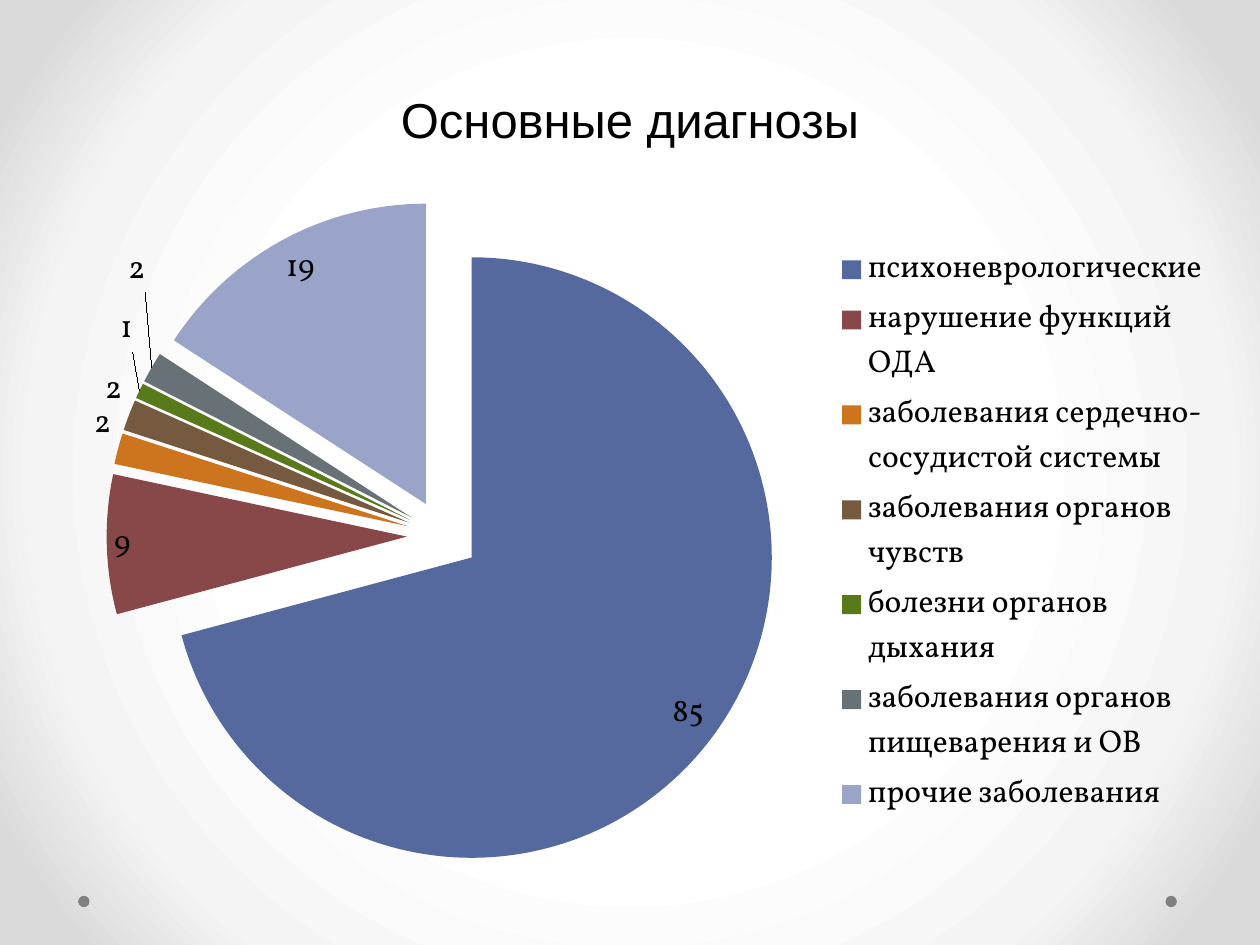
from dataclasses import dataclass

from lxml import etree
from pptx import Presentation
from pptx.chart.data import CategoryChartData
from pptx.dml.color import RGBColor
from pptx.enum.chart import XL_CHART_TYPE as ChartType
from pptx.enum.chart import XL_LABEL_POSITION as LabelPosition
from pptx.enum.chart import XL_LEGEND_POSITION as LegendPosition
from pptx.enum.shapes import MSO_SHAPE as Shape
from pptx.enum.text import MSO_ANCHOR as Anchor
from pptx.enum.text import PP_ALIGN as Align
from pptx.oxml import parse_xml
from pptx.oxml.ns import nsdecls, qn
from pptx.util import Inches, Pt

BLACK = RGBColor(0x00, 0x00, 0x00)
DOT_GRAY = RGBColor(0x80, 0x80, 0x80)
BLUE = RGBColor(0x55, 0x69, 0x9F)
RED = RGBColor(0x88, 0x48, 0x4A)
ORANGE = RGBColor(0xCC, 0x74, 0x1E)
BROWN = RGBColor(0x75, 0x5A, 0x3F)
GREEN = RGBColor(0x58, 0x7A, 0x1A)
SLATE = RGBColor(0x68, 0x72, 0x76)
LAVENDER = RGBColor(0x9A, 0xA4, 0xC9)

BACKDROP_STOPS = ((50, "FFFFFF"), (76, "F4F4F4"), (92, "DADADA"))
EXPLOSION = 12


@dataclass(frozen=True)
class Diagnosis:
    name: str
    cases: int
    color: RGBColor
    label: LabelPosition = LabelPosition.OUTSIDE_END
    label_rise: float = 0  # share of the chart height


DIAGNOSES = (
    Diagnosis("психоневрологические", 85, BLUE, LabelPosition.INSIDE_END),
    Diagnosis("нарушение функций ОДА", 9, RED, LabelPosition.INSIDE_END),
    Diagnosis("заболевания сердечно-сосудистой системы", 2, ORANGE),
    Diagnosis("заболевания органов чувств", 2, BROWN),
    Diagnosis("болезни органов дыхания", 1, GREEN, label_rise=0.05),
    Diagnosis("заболевания органов пищеварения и ОВ", 2, SLATE, label_rise=0.1),
    Diagnosis("прочие заболевания", 19, LAVENDER, LabelPosition.INSIDE_END),
)


def apply_format(target, values: dict) -> None:
    for name, value in values.items():
        setattr(target, name, value)


def set_backdrop(slide) -> None:
    """Fill the slide background with a circular gradient."""
    stops = "".join(
        f'<a:gs pos="{percent * 1000}"><a:srgbClr val="{color}"/></a:gs>'
        for percent, color in BACKDROP_STOPS
    )
    backdrop = parse_xml(
        f'<p:bg {nsdecls("p", "a")}><p:bgPr><a:gradFill rotWithShape="1">'
        f'<a:gsLst>{stops}</a:gsLst><a:path path="circle">'
        '<a:fillToRect l="50000" t="50000" r="50000" b="50000"/></a:path>'
        "</a:gradFill><a:effectLst/></p:bgPr></p:bg>"
    )
    slide.element.cSld.insert(0, backdrop)


def add_dot(slide, left: float) -> None:
    size = Inches(0.09)
    dot = slide.shapes.add_shape(
        Shape.OVAL, Inches(left), Inches(7.11), size, size
    )
    dot.shadow.inherit = False
    dot.fill.solid()
    dot.fill.fore_color.rgb = DOT_GRAY
    dot.line.fill.background()


def add_title(slide, text: str) -> None:
    box = slide.shapes.add_textbox(
        Inches(0.5), Inches(0.44), Inches(9), Inches(0.79)
    )
    frame = box.text_frame
    apply_format(frame, {"word_wrap": True, "vertical_anchor": Anchor.BOTTOM})
    line = frame.paragraphs[0]
    apply_format(
        line, {"text": text, "alignment": Align.CENTER, "line_spacing": Pt(58)}
    )
    font = line.runs[0].font
    apply_format(font, {"name": "Arial", "size": Pt(28)})
    font.color.rgb = BLACK


def manual_layout(**settings):
    """Build a c:layout element from its settings, in schema order."""
    layout = etree.Element(qn("c:layout"))
    manual = etree.SubElement(layout, qn("c:manualLayout"))
    for name, value in settings.items():
        etree.SubElement(manual, qn(f"c:{name}")).set("val", str(value))
    return layout


def replace_layout(parent, layout, after: str = "") -> None:
    for old in parent.findall(qn("c:layout")):
        parent.remove(old)
    if after:
        parent.find(qn(after)).addnext(layout)
    else:
        parent.insert(0, layout)


def add_diagnosis_chart(slide) -> None:
    data = CategoryChartData()
    data.categories = [diagnosis.name for diagnosis in DIAGNOSES]
    data.add_series("Series 1", [diagnosis.cases for diagnosis in DIAGNOSES])
    chart = slide.shapes.add_chart(
        ChartType.PIE, Inches(0.28), Inches(1.47), Inches(9.38), Inches(5.62), data
    ).chart
    apply_format(chart, {"has_title": False, "has_legend": True})
    apply_format(chart.font, {"name": "Vollkorn", "size": Pt(18)})
    chart.font.color.rgb = BLACK
    apply_format(
        chart.legend,
        {"position": LegendPosition.RIGHT, "include_in_layout": False},
    )

    chart_space = chart.plots[0].series[0].format.element.getroottree().getroot()
    plot_area = chart_space.find(".//" + qn("c:plotArea"))
    edges = {"xMode": "edge", "yMode": "edge"}
    replace_layout(
        plot_area,
        manual_layout(layoutTarget="inner", **edges, x=0.06, y=0.02, w=0.57, h=0.95),
    )
    replace_layout(
        chart_space.find(".//" + qn("c:legend")),
        manual_layout(**edges, x=0.67, y=0.08, w=0.33, h=0.82),
        after="c:legendPos",
    )

    pie = chart.plots[0]
    pie.vary_by_categories = True
    series = pie.series[0]
    series.format.line.fill.background()
    explosion = etree.Element(qn("c:explosion"))
    explosion.set("val", str(EXPLOSION))
    plot_area.find(".//" + qn("c:ser")).find(qn("c:spPr")).addnext(explosion)

    for position, diagnosis in enumerate(DIAGNOSES):
        point = series.points[position]
        point.format.fill.solid()
        point.format.fill.fore_color.rgb = diagnosis.color
        point.format.line.fill.background()
        point.data_label.position = diagnosis.label

    labels = plot_area.findall(".//" + qn("c:dLbl"))
    for diagnosis, label in zip(DIAGNOSES, labels):
        if diagnosis.label_rise:
            shift = manual_layout(x=0, y=-diagnosis.label_rise)
            replace_layout(label, shift, after="c:idx")


def main() -> None:
    deck = Presentation()
    apply_format(deck, {"slide_width": Inches(10), "slide_height": Inches(7.5)})
    slide = deck.slides.add_slide(deck.slide_layouts[6])
    set_backdrop(slide)
    for left in (9.25, 0.62):
        add_dot(slide, left)
    add_title(slide, "Основные диагнозы")
    add_diagnosis_chart(slide)
    deck.save("out.pptx")


if __name__ == "__main__":
    main()
